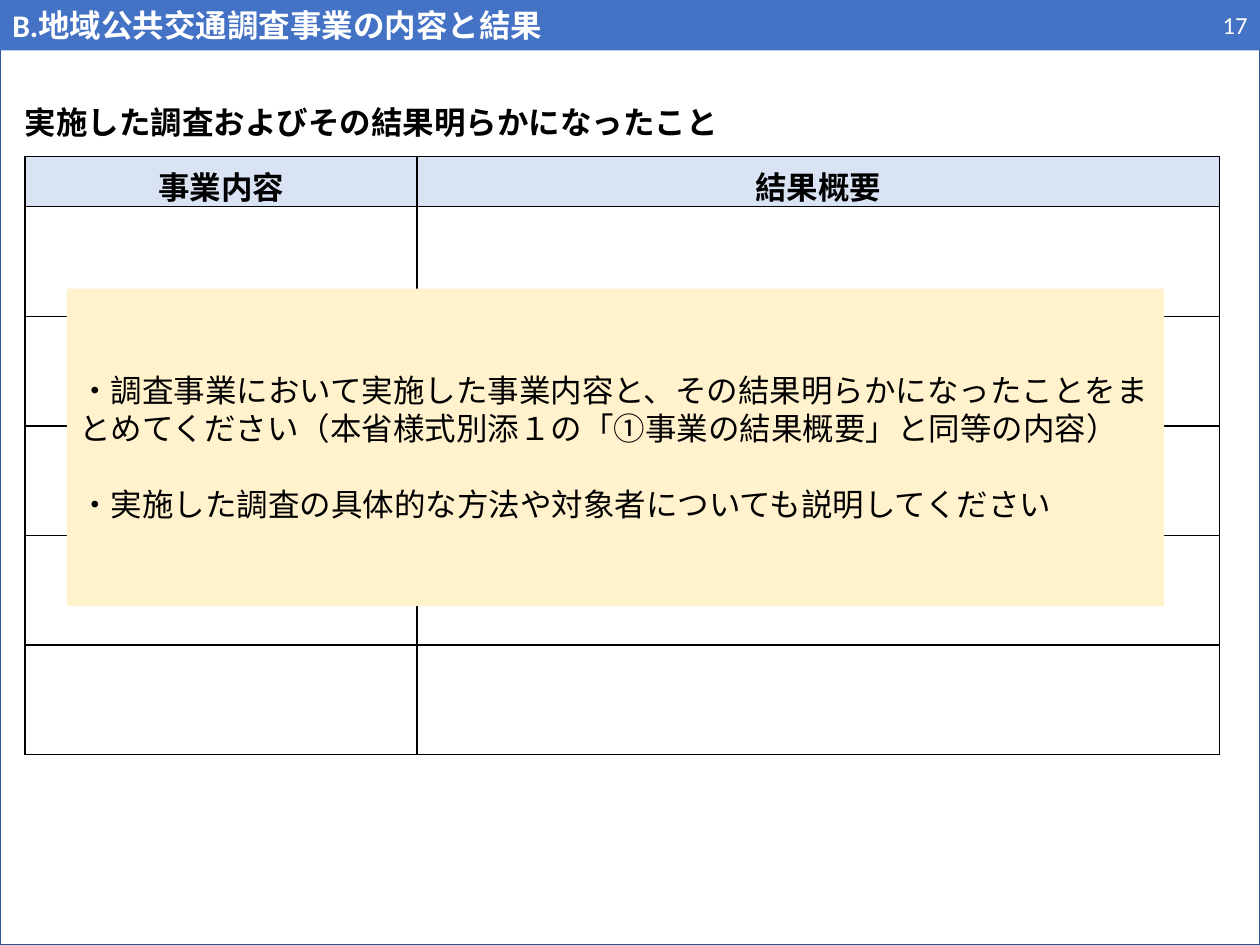
from lxml.etree import SubElement
from pptx import Presentation
from pptx.dml.color import RGBColor
from pptx.enum.shapes import MSO_SHAPE
from pptx.enum.text import MSO_ANCHOR, PP_ALIGN
from pptx.oxml.ns import qn
from pptx.util import Inches, Pt

BLUE = RGBColor(0x44, 0x72, 0xC4)
NAVY = RGBColor(0x2F, 0x55, 0x97)
PALE_BLUE = RGBColor(0xDA, 0xE3, 0xF3)
CREAM = RGBColor(0xFF, 0xF2, 0xCC)
BLACK = RGBColor(0, 0, 0)
WHITE = RGBColor(0xFF, 0xFF, 0xFF)
FONT = "Calibri"


def write(frame, text, color=BLACK, size=18, bold=False, align=PP_ALIGN.LEFT):
    frame.text = text
    for para in frame.paragraphs:
        para.alignment = align
        for span in para.runs:
            span.font.name = FONT
            span.font.size = Pt(size)
            span.font.bold = bold
            span.font.color.rgb = color


def add_rectangle(page, box, fill=None, line=None):
    shape = page.shapes.add_shape(MSO_SHAPE.RECTANGLE, *map(Inches, box))
    shape.shadow.inherit = False
    if fill is None:
        shape.fill.background()
    else:
        shape.fill.solid()
        shape.fill.fore_color.rgb = fill
    if line is None:
        shape.line.fill.background()
    else:
        shape.line.color.rgb = line
        shape.line.width = Pt(1)
    return shape


def add_text(page, box, text, anchor=MSO_ANCHOR.TOP, **style):
    frame = page.shapes.add_textbox(*map(Inches, box)).text_frame
    frame.word_wrap = True
    frame.vertical_anchor = anchor
    write(frame, text, **style)


def add_header(page, box):
    left, top, width, height = box
    bar = add_rectangle(page, box, fill=BLUE)
    bar.text_frame.vertical_anchor = MSO_ANCHOR.MIDDLE
    write(bar.text_frame, "B.地域公共交通調査事業の内容と結果", color=WHITE, bold=True)
    number_width = 1.18
    add_text(page, (left + width - number_width, top, number_width, height), "17",
             anchor=MSO_ANCHOR.MIDDLE, color=WHITE, size=14, align=PP_ALIGN.RIGHT)


def set_borders(cell):
    properties = cell._tc.get_or_add_tcPr()
    for position, side in enumerate(("a:lnL", "a:lnR", "a:lnT", "a:lnB")):
        line = properties.makeelement(qn(side), {"w": str(Pt(1))})
        fill = SubElement(line, qn("a:solidFill"))
        SubElement(fill, qn("a:srgbClr"), val=str(BLACK))
        properties.insert(position, line)


def add_results_table(page, box):
    headings = ("事業内容", "結果概要")
    column_widths = (3.11, 6.37)
    row_heights = [0.4] + [0.87] * 5
    table = page.shapes.add_table(len(row_heights), len(headings),
                                  *map(Inches, box)).table
    for column, width in zip(table.columns, column_widths):
        column.width = Inches(width)
    for row, height in zip(table.rows, row_heights):
        row.height = Inches(height)
    for cell in table.iter_cells():
        cell.fill.background()
        set_borders(cell)
    for cell, heading in zip(table.rows[0].cells, headings):
        cell.fill.solid()
        cell.fill.fore_color.rgb = PALE_BLUE
        write(cell.text_frame, heading, bold=True, align=PP_ALIGN.CENTER)


def add_guidance(page, box):
    note = add_rectangle(page, box, fill=CREAM)
    frame = note.text_frame
    frame.word_wrap = True
    frame.vertical_anchor = MSO_ANCHOR.MIDDLE
    write(frame, "・調査事業において実施した事業内容と、その結果明らかになったことをまとめてください"
                 "（本省様式別添１の「①事業の結果概要」と同等の内容）\n"
                 "・実施した調査の具体的な方法や対象者についても説明してください")
    frame.paragraphs[1].space_before = Pt(22)


def main():
    deck = Presentation()
    deck.slide_width = Inches(10)
    deck.slide_height = Inches(7.5)
    page = deck.slides.add_slide(deck.slide_layouts[6])
    add_rectangle(page, (0, 0, 10, 7.5), line=NAVY)
    add_header(page, (0, 0, 10, 0.4))
    add_results_table(page, (0.2, 1.24, 9.48, 4.75))
    add_text(page, (0.1, 0.77, 9.9, 0.4),
             "実施した調査およびその結果明らかになったこと", bold=True)
    add_guidance(page, (0.53, 2.29, 8.71, 2.52))
    deck.save("out.pptx")


if __name__ == "__main__":
    main()
